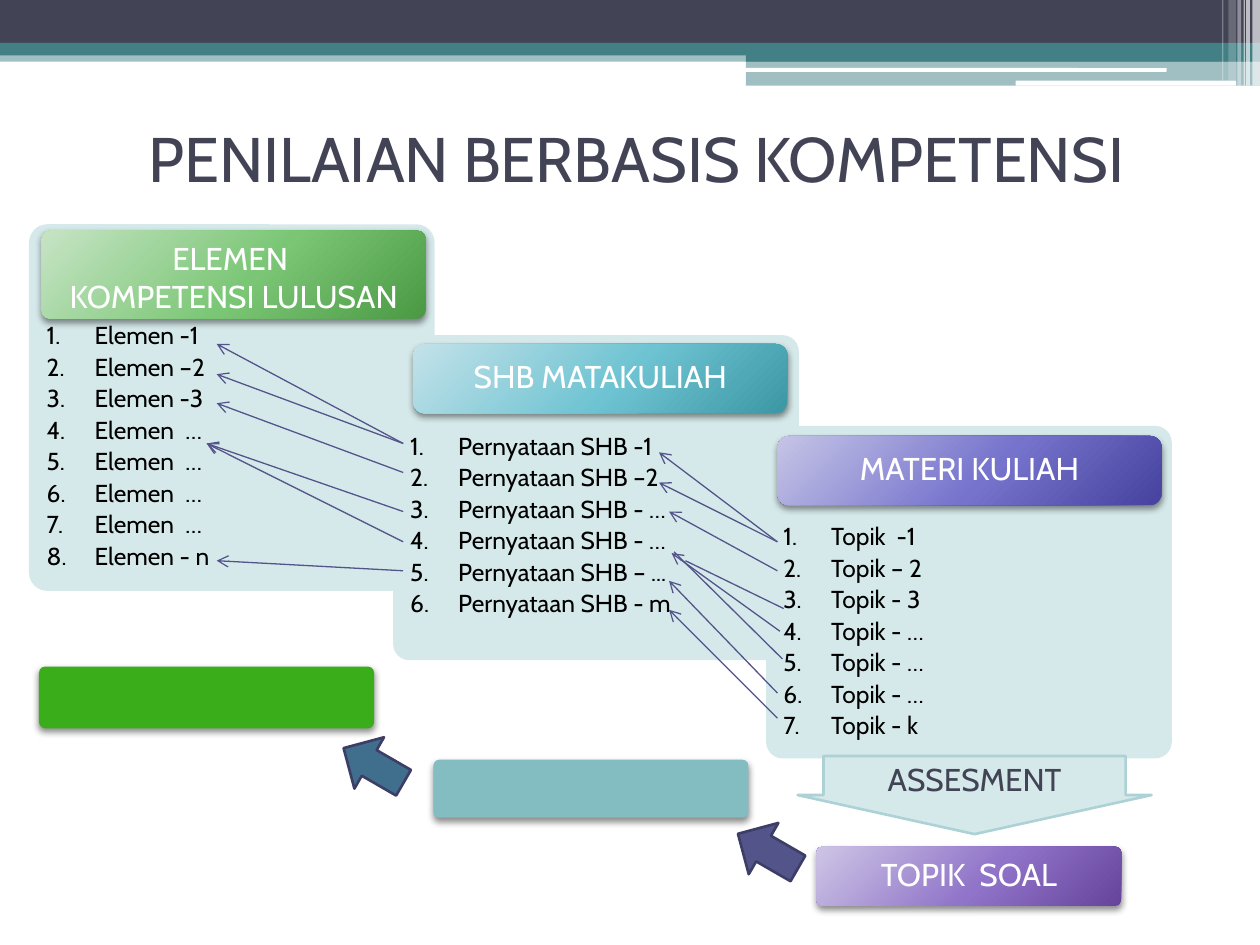
from lxml.etree import SubElement
from pptx import Presentation
from pptx.dml.color import RGBColor
from pptx.enum.shapes import MSO_CONNECTOR, MSO_SHAPE
from pptx.enum.text import MSO_ANCHOR, PP_ALIGN
from pptx.oxml.ns import qn
from pptx.util import Inches, Pt

THEME = {
    "font": "Cabin", "title": 36, "heading": 18, "item": 14,
    "dark": "424456", "teal": "438086", "white": "FFFFFF", "black": "000000",
    "card": "D6E9EA", "card_edge": "ADD2D6", "link": "53548A", "arrow_edge": "3D3E66",
    "steel": "406F8D", "plate_green": "3AAE1A", "plate_teal": "83BCC1",
    "green": ("C7E4C5", "7AC675", "4C9944"), "aqua": ("C3E2E9", "6EC3D2", "3C97A4"),
    "indigo": ("C5C4E6", "7573CC", "46429E"), "violet": ("CEC5E5", "9074C9", "66449C"),
}

TITLE = "PENILAIAN BERBASIS KOMPETENSI"

# left, top, width, height, colour, opacity in percent
BANDS = [
    (0, 0.4, 10, 0.09, "teal", 50), (0, 0, 10, 0.34, "dark", 100),
    (0, 0.34, 10, 0.1, "teal", 100), (5.92, 0.39, 4.08, 0.1, "teal", 100),
    (5.92, 0.48, 4.08, 0.2, "teal", 50),
]
WHITE_RULES = [(5.91, 0.54, 3.35, 0.03), (8.06, 0.64, 1.75, 0.04)]
# left, width, height, opacity
STRIPES = [
    (9.94, 0.06, 0.68, 65), (9.89, 0.03, 0.68, 65), (9.87, 0.01, 0.68, 60),
    (9.82, 0.03, 0.68, 40), (9.75, 0.06, 0.64, 20), (9.7, 0.01, 0.64, 30),
]

CARD_WIDTH = 3.22
LIST_TOP = 0.87
CARDS = [
    {"at": (0.23, 1.78), "height": 2.91, "heading": ["ELEMEN ", "KOMPETENSI LULUSAN"],
     "heading_at": (0.33, 1.83, 3.05, 0.7), "corner": 0.1, "colour": "green",
     "anchor": MSO_ANCHOR.TOP, "spacing": 1.0,
     "items": ["Elemen -1", "Elemen –2", "Elemen -3", "Elemen  …", "Elemen  …",
               "Elemen  …", "Elemen  …", "Elemen - n"]},
    {"at": (3.12, 2.66), "height": 2.58, "heading": ["SHB MATAKULIAH"],
     "heading_at": (3.28, 2.73, 2.97, 0.55), "corner": 0.167, "colour": "aqua",
     "anchor": MSO_ANCHOR.MIDDLE, "spacing": 0.9,
     "items": ["Pernyataan SHB -1", "Pernyataan SHB –2", "Pernyataan SHB - …",
               "Pernyataan SHB - …", "Pernyataan SHB – ...", "Pernyataan SHB - m"]},
    {"at": (6.08, 3.38), "height": 2.64, "heading": ["MATERI KULIAH"],
     "heading_at": (6.17, 3.46, 3.05, 0.55), "corner": 0.167, "colour": "indigo",
     "anchor": MSO_ANCHOR.MIDDLE, "spacing": 0.9,
     "items": ["Topik  -1", "Topik – 2", "Topik - 3", "Topik - …", "Topik - …",
               "Topik - …", "Topik - k"]},
]

# start x, start y, end x, end y
ARROW_LINKS = [
    (3.2, 3.52, 1.72, 2.73), (3.2, 3.52, 1.72, 2.97), (3.2, 3.75, 1.72, 3.2),
    (3.2, 4.3, 1.64, 3.52), (3.2, 4.06, 1.64, 3.52), (3.2, 4.53, 1.72, 4.45),
    (6.17, 4.3, 5.23, 3.59), (6.17, 4.3, 5.23, 3.83), (6.17, 4.53, 5.31, 4.06),
    (6.19, 5.01, 5.33, 4.39), (6.17, 5.5, 5.31, 4.61), (6.17, 5.7, 5.31, 4.84),
]
PLAIN_LINKS = [(6.21, 5.23, 5.35, 4.38), (6.22, 4.83, 5.44, 4.45)]

PLATES = [((3.44, 6.03, 2.5, 0.46), "plate_teal"), ((0.31, 5.29, 2.66, 0.49), "plate_green")]
STEP_ARROWS = [((2.73, 5.8, 0.47, 0.55), "steel"), ((5.86, 6.48, 0.47, 0.55), "link")]


def rgb(name):
    return RGBColor.from_string(THEME[name])


def add_colour(parent, value, opacity=100):
    colour = SubElement(parent, qn("a:srgbClr"), val=value)
    if opacity < 100:
        SubElement(colour, qn("a:alpha"), val=str(opacity * 1000))


def add_box(page, kind, at, fill, opacity=100, edge=None, adjust=(), shadow=False):
    """Draw a preset shape; a theme entry with three colours gives a radial gradient."""
    box = page.shapes.add_shape(kind, *map(Inches, at))
    box.shadow.inherit = False
    for index, value in enumerate(adjust):
        box.adjustments[index] = value
    if isinstance(THEME[fill], tuple):
        box.fill.gradient()
        gradient = box._element.spPr.find(qn("a:gradFill"))
        for child in list(gradient):
            gradient.remove(child)
        stops = SubElement(gradient, qn("a:gsLst"))
        for position, value in zip((0, 55, 100), THEME[fill]):
            add_colour(SubElement(stops, qn("a:gs"), pos=str(position * 1000)), value)
        circle = SubElement(gradient, qn("a:path"), path="circle")
        SubElement(circle, qn("a:fillToRect"), l="-40000", t="-90000", r="140000", b="190000")
    else:
        box.fill.solid()
        box.fill.fore_color.rgb = rgb(fill)
        if opacity < 100:
            colour = box._element.spPr.find(qn("a:solidFill"))[0]
            SubElement(colour, qn("a:alpha"), val=str(opacity * 1000))
    if edge:
        box.line.color.rgb = rgb(edge)
        box.line.width = Pt(1.5)
    else:
        box.line.fill.background()
    if shadow:
        effects = box._element.spPr.find(qn("a:effectLst"))
        outer = SubElement(effects, qn("a:outerShdw"), blurRad=str(Pt(4)), dist=str(Pt(2)),
                           dir="5400000", algn="ctr", rotWithShape="0")
        add_colour(outer, THEME["black"], 45)
    return box


def write(box, lines, size="heading", colour="white", align=PP_ALIGN.CENTER,
          anchor=MSO_ANCHOR.TOP, spacing=1.0, after=0, numbered=False):
    frame = box.text_frame
    frame.word_wrap = True
    frame.vertical_anchor = anchor
    for index, text in enumerate(lines):
        para = frame.add_paragraph() if index else frame.paragraphs[0]
        para.alignment = align
        para.line_spacing = spacing
        para.space_after = Pt(after)
        if numbered:
            properties = para._p.get_or_add_pPr()
            properties.set("marL", str(Inches(0.38)))
            properties.set("indent", str(Inches(-0.38)))
            SubElement(properties, qn("a:buFont"), typeface="+mj-lt")
            SubElement(properties, qn("a:buAutoNum"), type="arabicPeriod")
        span = para.add_run()
        span.text = text
        span.font.name = THEME["font"]
        span.font.size = Pt(THEME[size])
        span.font.color.rgb = rgb(colour)


def add_link(page, ends, arrow):
    link = page.shapes.add_connector(MSO_CONNECTOR.STRAIGHT, *map(Inches, ends))
    link.line.color.rgb = rgb("link")
    link.line.width = Pt(0.75)
    if arrow:
        SubElement(link.line._get_or_add_ln(), qn("a:tailEnd"), type="arrow")
    SubElement(link._element.spPr, qn("a:effectLst"))


def add_card(page, card):
    box = add_box(page, MSO_SHAPE.ROUNDED_RECTANGLE, (*card["at"], CARD_WIDTH, card["height"]),
                  "card", adjust=[0.05])
    box.text_frame.margin_top = Inches(LIST_TOP)
    box.text_frame.margin_bottom = 0
    write(box, card["items"], size="item", colour="black", align=PP_ALIGN.LEFT,
          spacing=Pt(6), after=12, numbered=True)
    heading = add_box(page, MSO_SHAPE.ROUNDED_RECTANGLE, card["heading_at"], card["colour"],
                      adjust=[card["corner"]], shadow=True)
    write(heading, card["heading"], anchor=card["anchor"], spacing=card["spacing"])


def main():
    deck = Presentation()
    deck.slide_width, deck.slide_height = Inches(10), Inches(7.5)
    page = deck.slides.add_slide(deck.slide_layouts[6])

    for *at, colour, opacity in BANDS:
        add_box(page, MSO_SHAPE.RECTANGLE, at, colour, opacity)
    for at in WHITE_RULES:
        add_box(page, MSO_SHAPE.ROUNDED_RECTANGLE, at, "white")
    for left, width, height, opacity in STRIPES:
        add_box(page, MSO_SHAPE.RECTANGLE, (left, 0, width, height), "white", opacity)

    title = page.shapes.add_textbox(*map(Inches, (0.55, 0.94, 9, 0.62)))
    write(title, [TITLE], size="title", colour="dark", anchor=MSO_ANCHOR.MIDDLE)

    for card in CARDS:
        add_card(page, card)
    for ends in ARROW_LINKS:
        add_link(page, ends, arrow=True)
    for ends in PLAIN_LINKS:
        add_link(page, ends, arrow=False)

    assessment = add_box(page, MSO_SHAPE.DOWN_ARROW, (6.33, 6, 2.81, 0.62), "card",
                         edge="card_edge", adjust=[0.853, 0.5])
    write(assessment, ["ASSESMENT"], colour="dark", anchor=MSO_ANCHOR.MIDDLE)
    for at, colour in PLATES:
        add_box(page, MSO_SHAPE.ROUNDED_RECTANGLE, at, colour, adjust=[0.1], shadow=True)
    question = add_box(page, MSO_SHAPE.ROUNDED_RECTANGLE, (6.48, 6.72, 2.42, 0.47), "violet",
                       adjust=[0.1], shadow=True)
    write(question, ["TOPIK  SOAL"])
    for at, colour in STEP_ARROWS:
        arrow = add_box(page, MSO_SHAPE.UP_ARROW, at, colour, edge="arrow_edge")
        arrow.rotation = 300

    deck.save("out.pptx")


if __name__ == "__main__":
    main()
